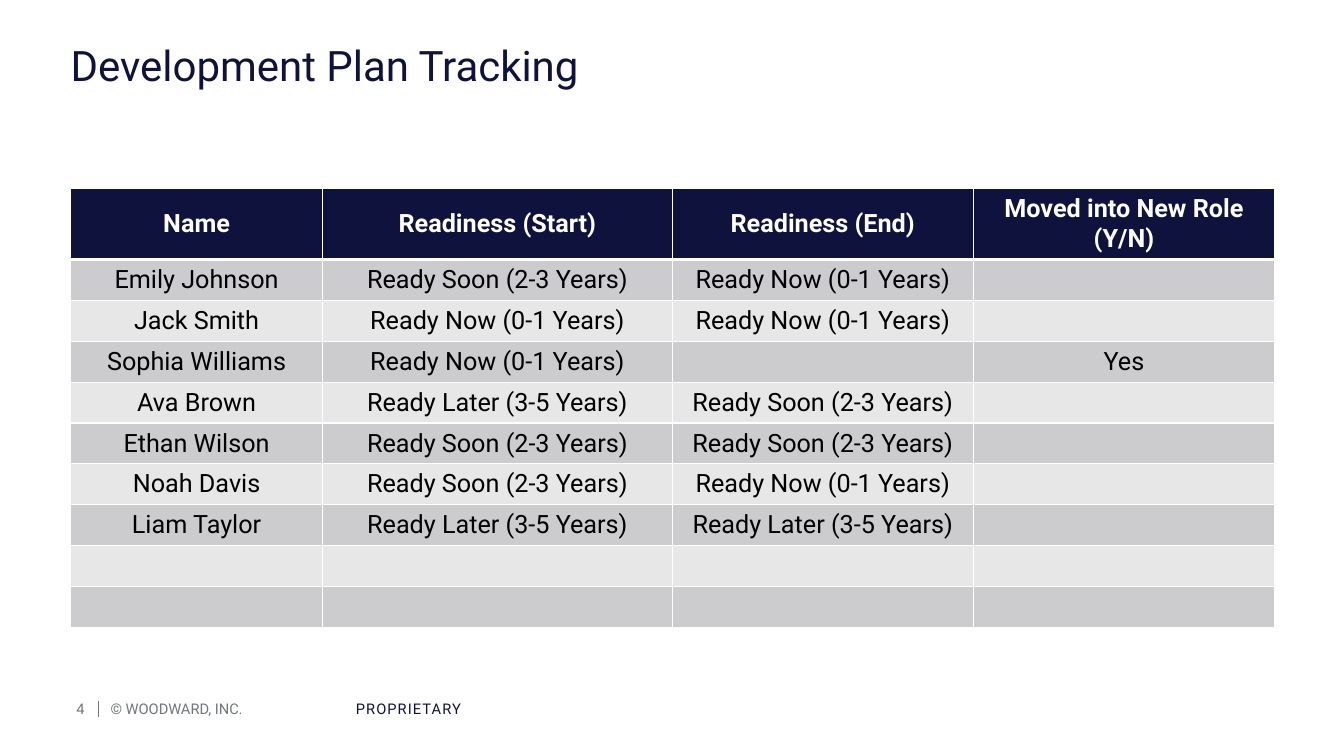
from lxml.etree import SubElement
from pptx import Presentation
from pptx.dml.color import RGBColor
from pptx.enum.shapes import MSO_CONNECTOR
from pptx.enum.text import MSO_ANCHOR as Anchor, PP_ALIGN as Align
from pptx.oxml.ns import qn
from pptx.util import Cm, Pt

NAVY = RGBColor(0x0F, 0x12, 0x3C)
GRAY = RGBColor(0x71, 0x77, 0x7A)
WHITE = RGBColor(0xFF, 0xFF, 0xFF)
BLACK = RGBColor(0x00, 0x00, 0x00)
BAND_DARK = RGBColor(0xCC, 0xCC, 0xCE)
BAND_LIGHT = RGBColor(0xE7, 0xE7, 0xE8)
FONT = "Roboto"

NOW = "Ready Now (0-1 Years)"
SOON = "Ready Soon (2-3 Years)"
LATER = "Ready Later (3-5 Years)"
ROWS = [
    ("Name", "Readiness (Start)", "Readiness (End)", "Moved into New Role (Y/N)"),
    ("Emily Johnson", SOON, NOW, ""),
    ("Jack Smith", NOW, NOW, ""),
    ("Sophia Williams", NOW, "", "Yes"),
    ("Ava Brown", LATER, SOON, ""),
    ("Ethan Wilson", SOON, SOON, ""),
    ("Noah Davis", SOON, NOW, ""),
    ("Liam Taylor", LATER, LATER, ""),
    ("", "", "", ""),
    ("", "", "", ""),
]
COLUMN_WIDTHS = [6.35, 8.81, 7.59, 7.59]
HEADER_HEIGHT, ROW_HEIGHT = 1.74, 1.03
LEFT, CONTENT_WIDTH = 1.78, 30.34
FOOTER_TOP, FOOTER_HEIGHT = 17.63, 0.46


def style_font(paragraph, size, color, bold=False):
    font = paragraph.font
    font.name, font.size, font.bold = FONT, Pt(size), bold
    font.color.rgb = color


def add_text(slide, text, left, top, width, height, size, color,
             align=Align.LEFT, anchor=Anchor.MIDDLE):
    box = slide.shapes.add_textbox(Cm(left), Cm(top), Cm(width), Cm(height))
    frame = box.text_frame
    frame.margin_left = frame.margin_top = frame.margin_right = frame.margin_bottom = 0
    frame.word_wrap = True
    frame.vertical_anchor = anchor
    paragraph = frame.paragraphs[0]
    paragraph.text = text
    paragraph.alignment = align
    style_font(paragraph, size, color)
    return paragraph


def add_footer_text(slide, text, left, width, color, align=Align.LEFT):
    return add_text(slide, text, left, FOOTER_TOP, width, FOOTER_HEIGHT, 10.5, color, align)


def add_footer_divider(slide):
    line = slide.shapes.add_connector(
        MSO_CONNECTOR.STRAIGHT, Cm(2.47), Cm(17.66), Cm(2.47), Cm(18.06))
    line.line.color.rgb = GRAY
    line.line.width = Pt(0.5)
    SubElement(line._element.spPr, qn("a:effectLst"))


def set_borders(cell, bottom_width):
    """Draw white borders; must run before the cell's fill is set."""
    properties = cell._tc.get_or_add_tcPr()
    for side, width in (("L", 1), ("R", 1), ("T", 1), ("B", bottom_width)):
        border = SubElement(properties, qn(f"a:ln{side}"), w=str(Pt(width)))
        fill = SubElement(border, qn("a:solidFill"))
        SubElement(fill, qn("a:srgbClr"), val=str(WHITE))


def fill_cell(cell, text, row_number):
    header = row_number == 0
    set_borders(cell, 3 if header else 1)
    cell.fill.solid()
    band = BAND_DARK if row_number % 2 else BAND_LIGHT
    cell.fill.fore_color.rgb = NAVY if header else band
    cell.vertical_anchor = Anchor.MIDDLE
    paragraph = cell.text_frame.paragraphs[0]
    if text:
        paragraph.text = text
    paragraph.alignment = Align.CENTER
    style_font(paragraph, 18, WHITE if header else BLACK, header)


def add_tracking_table(slide):
    height = HEADER_HEIGHT + ROW_HEIGHT * (len(ROWS) - 1)
    table = slide.shapes.add_table(
        len(ROWS), len(COLUMN_WIDTHS), Cm(LEFT), Cm(4.76), Cm(CONTENT_WIDTH), Cm(height)).table
    for column, width in zip(table.columns, COLUMN_WIDTHS):
        column.width = Cm(width)
    for row_number, (row, texts) in enumerate(zip(table.rows, ROWS)):
        row.height = Cm(ROW_HEIGHT if row_number else HEADER_HEIGHT)
        for cell, text in zip(row.cells, texts):
            fill_cell(cell, text, row_number)


def main():
    presentation = Presentation()
    presentation.slide_width, presentation.slide_height = Cm(33.87), Cm(19.05)
    slide = presentation.slides.add_slide(presentation.slide_layouts[6])

    title = add_text(slide, "Development Plan Tracking", LEFT, 1.14, CONTENT_WIDTH, 2.31,
                     30, NAVY, anchor=Anchor.TOP)
    title.line_spacing = 0.9
    add_tracking_table(slide)

    add_footer_text(slide, "4", 0.53, 1.6, GRAY, Align.RIGHT)
    add_footer_divider(slide)
    add_footer_text(slide, "© WOODWARD, INC.", 2.79, 4.78, GRAY)
    marking = add_footer_text(slide, "PROPRIETARY", 8.97, 11.43, NAVY)
    marking.runs[0]._r.get_or_add_rPr().set("spc", "80")

    presentation.save("out.pptx")


if __name__ == "__main__":
    main()
